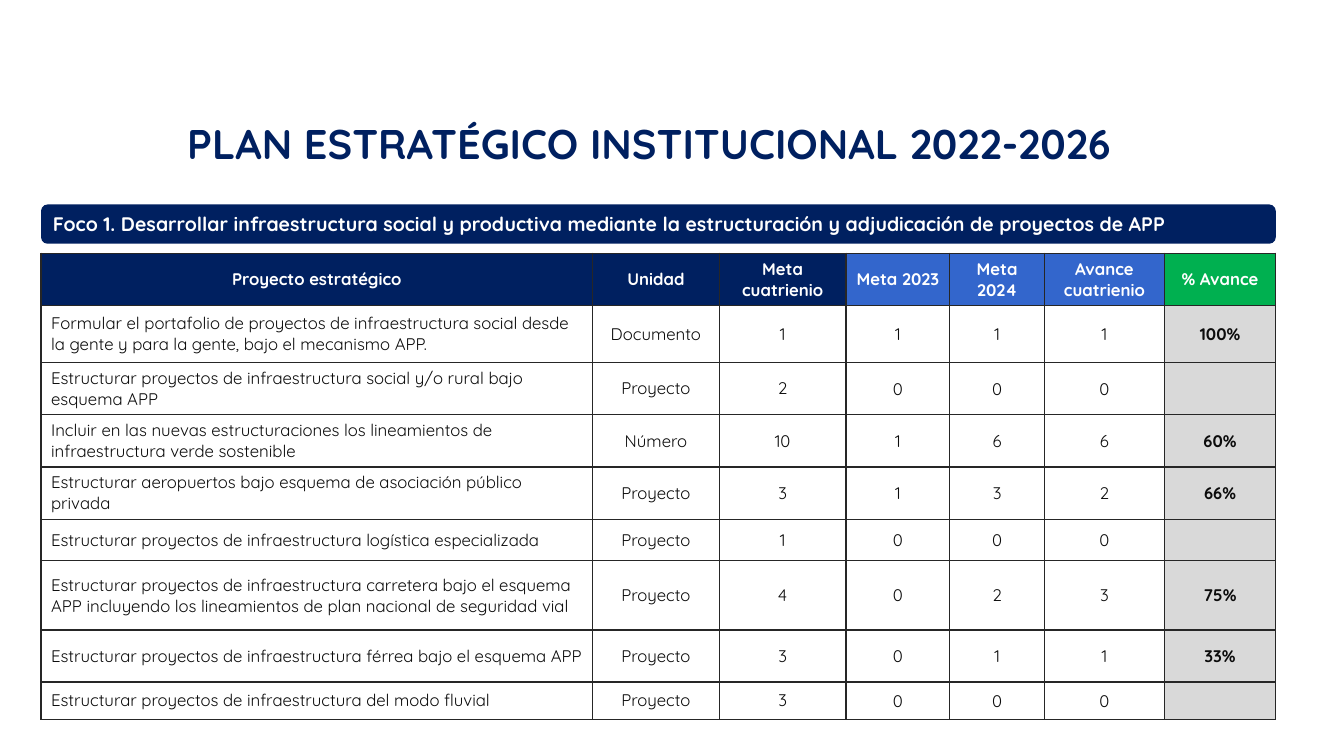
from lxml import etree
from pptx import Presentation
from pptx import util as u
from pptx.dml.color import RGBColor
from pptx.enum import shapes, text
from pptx.oxml.ns import qn

# Content
TITLE = "PLAN ESTRATÉGICO INSTITUCIONAL 2022-2026"
FOCUS = ("Foco 1. Desarrollar infraestructura social y productiva mediante la "
         "estructuración y adjudicación de proyectos de APP")
HEADER = ["Proyecto estratégico", "Unidad", "Meta cuatrienio", "Meta 2023",
          "Meta 2024", "Avance cuatrienio", "% Avance"]
PROJECTS = [
    ("Formular el portafolio de proyectos de infraestructura social desde la gente "
     "y para la gente, bajo el mecanismo APP.", "Documento", 1, 1, 1, 1, "100%"),
    ("Estructurar proyectos de infraestructura social y/o rural bajo esquema APP",
     "Proyecto", 2, 0, 0, 0, ""),
    ("Incluir en las nuevas estructuraciones los lineamientos de infraestructura "
     "verde sostenible", "Número", 10, 1, 6, 6, "60%"),
    ("Estructurar aeropuertos bajo esquema de asociación público privada",
     "Proyecto", 3, 1, 3, 2, "66%"),
    ("Estructurar proyectos de infraestructura logística especializada",
     "Proyecto", 1, 0, 0, 0, ""),
    ("Estructurar proyectos de infraestructura carretera bajo el esquema APP "
     "incluyendo los lineamientos de plan nacional de seguridad vial",
     "Proyecto", 4, 0, 2, 3, "75%"),
    ("Estructurar proyectos de infraestructura férrea bajo el esquema APP",
     "Proyecto", 3, 0, 1, 1, "33%"),
    ("Estructurar proyectos de infraestructura del modo fluvial",
     "Proyecto", 3, 0, 0, 0, ""),
]

# Look and measures, in points
COLORS = {"navy": "002060", "blue": "3366CC", "green": "00B050", "gray": "D9D9D9",
          "white": "FFFFFF", "ink": "0C0C0C", "border": "262626"}
HEADER_FILLS = ["navy"] * 3 + ["blue"] * 3 + ["green"]
BODY_FILLS = [None] * 5 + ["white", "gray"]
COL_WIDTHS = [394, 90.5, 90.5, 74.2, 67.6, 85.8, 79.4]
ROW_HEIGHTS = [37.5, 40.3, 37.5, 37.5, 37.2, 29.5, 49.7, 37.2, 26.6]
LEFT, WIDTH = 29.3, sum(COL_WIDTHS)
FIRST_TIGHT_COL = 3


def rgb(name):
    return RGBColor.from_string(COLORS[name])


def write(tf, content, size=12, color="ink", bold=False, center=True, spacing=None):
    tf.word_wrap = True
    p = tf.paragraphs[0]
    p.alignment = text.PP_ALIGN.CENTER if center else text.PP_ALIGN.LEFT
    if spacing:
        p.line_spacing = spacing
    r = p.add_run()
    r.text = content
    r.font.name, r.font.size, r.font.bold = "Quicksand", u.Pt(size), bold
    r.font.color.rgb = rgb(color)


def set_fill(cell, name):
    if name:
        cell.fill.solid()
        cell.fill.fore_color.rgb = rgb(name)
    else:
        cell.fill.background()


def set_borders(cell):
    tc_pr = cell._tc.get_or_add_tcPr()
    for i, side in enumerate(("lnL", "lnR", "lnT", "lnB")):
        ln = etree.Element(qn("a:" + side), w=str(u.Pt(1)))
        solid = etree.SubElement(ln, qn("a:solidFill"))
        etree.SubElement(solid, qn("a:srgbClr"), val=COLORS["border"])
        tc_pr.insert(i, ln)


prs = Presentation()
prs.slide_width, prs.slide_height = u.Pt(960), u.Pt(540)
s = prs.slides.add_slide(prs.slide_layouts[6])

# Table
frame = s.shapes.add_table(len(ROW_HEIGHTS), len(COL_WIDTHS), u.Pt(LEFT), u.Pt(180.9),
                           u.Pt(WIDTH), u.Pt(sum(ROW_HEIGHTS)))
table = frame.table
table.horz_banding = False
for col, width in zip(table.columns, COL_WIDTHS):
    col.width = u.Pt(width)
for row, height in zip(table.rows, ROW_HEIGHTS):
    row.height = u.Pt(height)
for i, values in enumerate([HEADER] + PROJECTS):
    is_header = i == 0
    fills = HEADER_FILLS if is_header else BODY_FILLS
    for j, value in enumerate(values):
        cell = table.cell(i, j)
        cell.vertical_anchor = text.MSO_ANCHOR.MIDDLE
        if not is_header and j >= FIRST_TIGHT_COL:
            cell.margin_left = cell.margin_top = cell.margin_right = u.Pt(0.7)
            cell.margin_bottom = 0
        set_fill(cell, fills[j])
        set_borders(cell)
        write(cell.text_frame, str(value), color="white" if is_header else "ink",
              bold=is_header or j == len(values) - 1, center=is_header or j > 0)

# Focus banner
banner = s.shapes.add_shape(shapes.MSO_SHAPE.ROUNDED_RECTANGLE, u.Pt(LEFT), u.Pt(146),
                            u.Pt(WIDTH), u.Pt(28.1))
banner.shadow.inherit = False
banner.fill.solid()
banner.fill.fore_color.rgb = rgb("navy")
banner.line.fill.background()
banner.text_frame.vertical_anchor = text.MSO_ANCHOR.MIDDLE
write(banner.text_frame, FOCUS, size=14, color="white", bold=True, center=False)

# Title
title = s.shapes.add_textbox(u.Pt(80.6), u.Pt(77), u.Pt(766.8), u.Pt(54.7))
title.text_frame.vertical_anchor = text.MSO_ANCHOR.MIDDLE
write(title.text_frame, TITLE, size=29.6, color="navy", bold=True, spacing=0.9)

prs.save("out.pptx")
